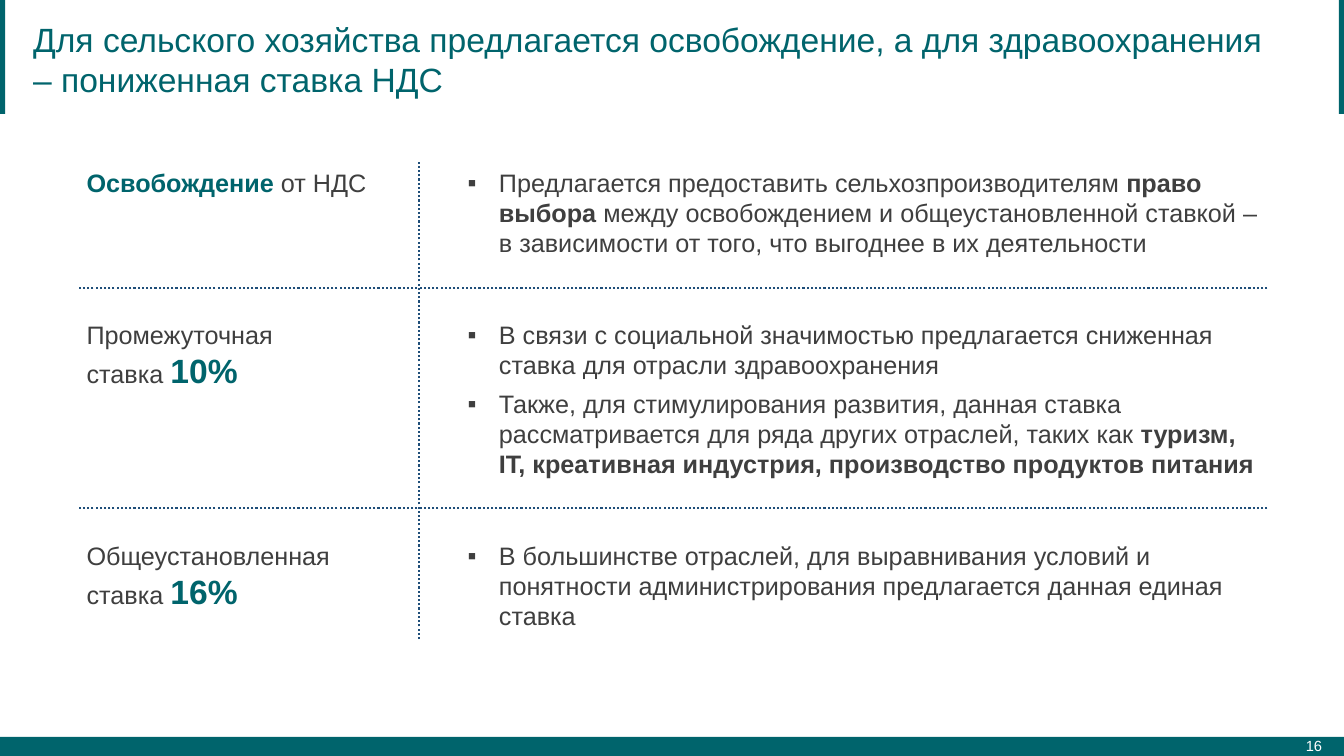
"""Builds the slide on proposed VAT rates by industry."""
from lxml import etree
from pptx import Presentation
from pptx import util as u
from pptx.dml.color import RGBColor
from pptx.enum import dml, shapes, text
from pptx.oxml.ns import qn

EMU_PER_PX = 9144
TEAL, GREY, NAVY, WHITE = "00646C", "3F3F3F", "1F4E79", "FFFFFF"
SLIDE_WIDTH, SLIDE_HEIGHT = 1333, 750
LABEL_LEFT, DETAIL_LEFT = 76, 454
RULE_RIGHT, DIVIDER_X = 1257, 416

STRONG = {"bold": True}
ACCENT = {"bold": True, "color": TEAL}
RATE = {"bold": True, "color": TEAL, "size": 24}

RATE_ROWS = [
    (161, 40, 101,
     [[("Освобождение", ACCENT), (" от НДС", {})]],
     [[("Предлагается предоставить сельхозпроизводителям ", {}),
       ("право выбора ", STRONG),
       ("между освобождением и общеустановленной ставкой – в зависимости "
        "от того, что выгоднее в их деятельности", {})]]),
    (312, 81, 170,
     [[("Промежуточная", {})], [("ставка ", {}), ("10%", RATE)]],
     [[("В связи с социальной значимостью предлагается сниженная ставка "
        "для отрасли здравоохранения", {})],
      [("Также, для стимулирования развития, данная ставка рассматривается "
        "для ряда других отраслей, таких как ", {}),
       ("туризм, IT, креативная индустрия, производство продуктов питания", STRONG)]]),
    (531, 81, 101,
     [[("Общеустановленная", {})], [("ставка ", {}), ("16%", RATE)]],
     [[("В большинстве отраслей, для выравнивания условий и понятности "
        "администрирования предлагается данная единая ставка", {})]]),
]


def px(length):
    """Turn a length in px into EMU."""
    return u.Emu(length * EMU_PER_PX)


def rgb(hex_color):
    """Turn a hex string into a colour."""
    return RGBColor.from_string(hex_color)


def add_bar(slide, left, top, width, height):
    """Add a plain teal bar."""
    bar = slide.shapes.add_shape(
        shapes.MSO_SHAPE.RECTANGLE, px(left), px(top), px(width), px(height))
    bar.shadow.inherit = False
    bar.fill.solid()
    bar.fill.fore_color.rgb = rgb(TEAL)
    bar.line.fill.background()


def add_dotted_line(slide, x1, y1, x2, y2):
    """Add a dotted separator line."""
    line = slide.shapes.add_connector(
        shapes.MSO_CONNECTOR.STRAIGHT, px(x1), px(y1), px(x2), px(y2))
    line.line.color.rgb = rgb(NAVY)
    line.line.width = u.Pt(1.5)
    line.line.dash_style = dml.MSO_LINE.ROUND_DOT
    etree.SubElement(line._element.spPr, qn("a:effectLst"))


def add_bullet(paragraph):
    """Give a paragraph a square bullet with a hanging indent."""
    properties = paragraph._p.get_or_add_pPr()
    properties.set("marL", str(px(31)))
    properties.set("indent", str(px(-31)))
    paragraph.space_after = u.Pt(6)
    etree.SubElement(properties, qn("a:buFont"), typeface="Arial")
    etree.SubElement(properties, qn("a:buChar"), char="▪")


def add_run(paragraph, words, size=18, color=GREY, bold=False):
    """Add formatted words to a paragraph."""
    run = paragraph.add_run()
    run.text = words
    run.font.name = "Arial"
    run.font.size = u.Pt(size)
    run.font.bold = bold
    run.font.color.rgb = rgb(color)


def add_text(slide, box, paragraphs, bullets=False,
             anchor=text.MSO_ANCHOR.TOP, align=text.PP_ALIGN.LEFT):
    """Add a wrapped text box holding paragraphs of (words, format) runs."""
    frame = slide.shapes.add_textbox(*map(px, box)).text_frame
    frame.word_wrap = True
    frame.vertical_anchor = anchor
    for index, runs in enumerate(paragraphs):
        paragraph = frame.add_paragraph() if index else frame.paragraphs[0]
        paragraph.alignment = align
        if bullets:
            add_bullet(paragraph)
        for words, style in runs:
            add_run(paragraph, words, **style)


def main():
    """Build and save the slide."""
    presentation = Presentation()
    presentation.slide_width = px(SLIDE_WIDTH)
    presentation.slide_height = px(SLIDE_HEIGHT)
    slide = presentation.slides.add_slide(presentation.slide_layouts[6])

    add_bar(slide, 0, 731, SLIDE_WIDTH, 20)
    for left in (0, SLIDE_WIDTH - 5):
        add_bar(slide, left, -2, 5, 115)
    add_text(slide, (1192, 720, 129, 40), [[("16", {"size": 10.5, "color": WHITE})]],
             anchor=text.MSO_ANCHOR.MIDDLE, align=text.PP_ALIGN.RIGHT)
    add_text(slide, (23, 20, 1255, 77),
             [[("Для сельского хозяйства предлагается освобождение, а для "
                "здравоохранения – пониженная ставка НДС", {"size": 24, "color": TEAL})]],
             anchor=text.MSO_ANCHOR.MIDDLE)

    for top, label_height, detail_height, label, detail in RATE_ROWS:
        add_text(slide, (LABEL_LEFT, top, 349, label_height), label)
        add_text(slide, (DETAIL_LEFT, top, 812, detail_height), detail, bullets=True)

    for y in (286, 504):
        add_dotted_line(slide, RULE_RIGHT, y, LABEL_LEFT, y)
    add_dotted_line(slide, DIVIDER_X, 634, DIVIDER_X, 161)

    presentation.save("out.pptx")


if __name__ == "__main__":
    main()
